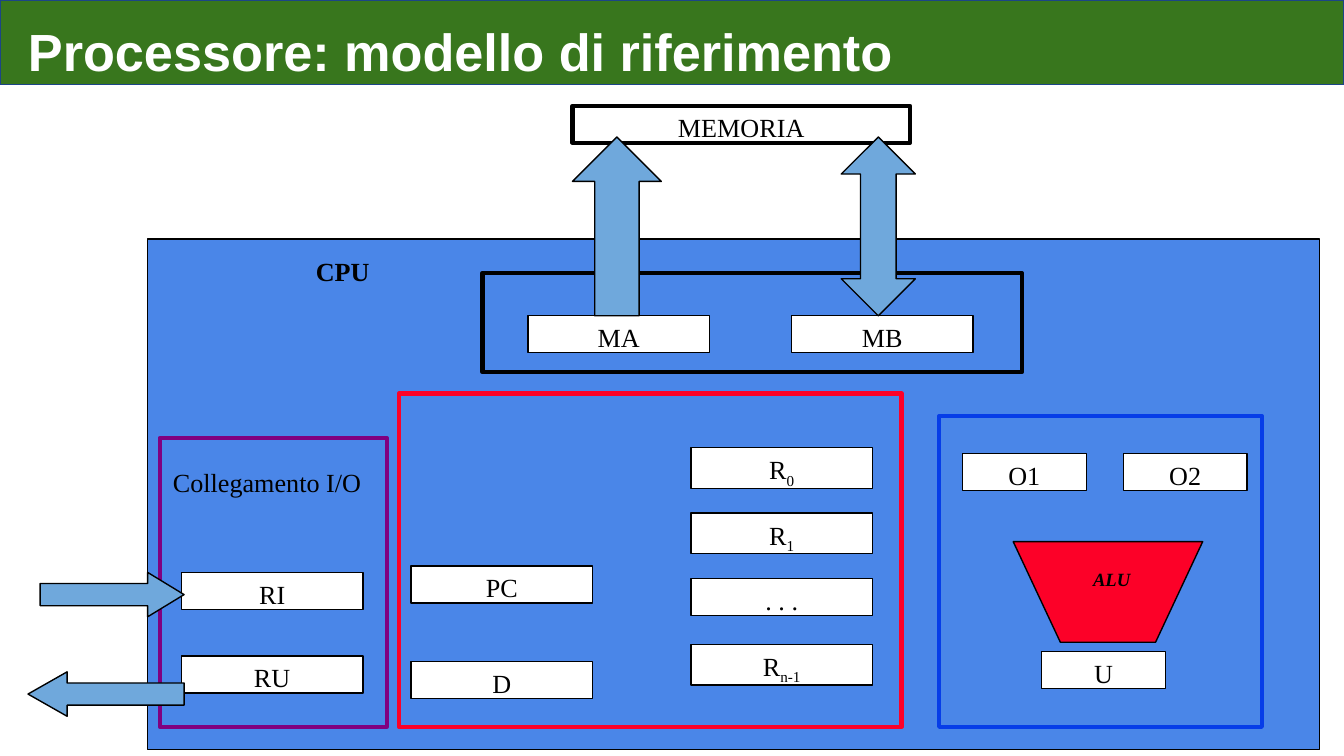
"""Build the slide on the reference model of a processor."""

from dataclasses import dataclass
from typing import Optional

from pptx import Presentation
from pptx.dml.color import RGBColor
from pptx.enum.shapes import MSO_SHAPE
from pptx.enum.text import MSO_ANCHOR, PP_ALIGN
from pptx.util import Cm, Pt

BLACK = RGBColor(0x00, 0x00, 0x00)
WHITE = RGBColor(0xFF, 0xFF, 0xFF)
CPU_BLUE = RGBColor(0x4A, 0x86, 0xE8)
ARROW_BLUE = RGBColor(0x6F, 0xA8, 0xDC)
FRAME_BLUE = RGBColor(0x06, 0x3D, 0xE8)
RED = RGBColor(0xFC, 0x01, 0x28)
PURPLE = RGBColor(0x80, 0x00, 0x80)
GREEN = RGBColor(0x38, 0x76, 0x1D)
NAVY = RGBColor(0x1C, 0x45, 0x87)

REGISTER_W, OPERAND_W, REGISTER_H = 3.43, 2.34, 0.7
GENERAL_TOP, GENERAL_PITCH = 8.46, 1.24
THIN, THICK = 0.75, 2.25


@dataclass
class Box:
    left: float
    top: float
    width: float
    height: float = REGISTER_H
    text: str = ""
    sub: str = ""
    fill: Optional[RGBColor] = WHITE
    line: Optional[RGBColor] = BLACK
    weight: float = THIN
    size: int = 14
    bold: bool = False
    italic: bool = False
    align: PP_ALIGN = PP_ALIGN.CENTER


@dataclass
class Arrow:
    kind: MSO_SHAPE
    left: float
    top: float
    width: float
    height: float
    shaft: float
    head: float


CPU = Box(2.79, 4.52, 22.15, 9.65, fill=CPU_BLUE)

FRAMES = [
    Box(9.12, 5.16, 10.19, 1.88, fill=None, weight=THICK),
    Box(7.54, 7.44, 9.5, 6.3, fill=None, line=RED, weight=THICK),
    Box(17.75, 7.87, 6.1, 5.87, fill=None, line=FRAME_BLUE, weight=THICK),
    Box(3.02, 8.28, 4.29, 5.46, fill=None, line=PURPLE, weight=THICK),
]

REGISTERS = [
    Box(10.82, 2, 6.38, text="MEMORIA", fill=None, weight=THICK),
    Box(9.98, 5.97, REGISTER_W, text="MA"),
    Box(14.96, 5.97, REGISTER_W, text="MB"),
    Box(7.77, 10.7, REGISTER_W, text="PC"),
    Box(7.77, 12.5, REGISTER_W, text="D"),
    Box(3.43, 10.82, REGISTER_W, text="RI"),
    Box(3.43, 12.4, REGISTER_W, text="RU"),
    Box(18.19, 8.57, OPERAND_W, text="O1"),
    Box(21.23, 8.57, OPERAND_W, text="O2"),
    Box(19.69, 12.32, OPERAND_W, text="U"),
]

GENERAL_REGISTERS = [
    Box(13.06, GENERAL_TOP + i * GENERAL_PITCH, REGISTER_W, height, text, sub)
    for i, (text, sub, height) in enumerate(
        [("R", "0", 0.77), ("R", "1", 0.77), (". . .", "", REGISTER_H), ("R", "n-1", 0.77)]
    )
]

LABELS = [
    Box(20.07, 10.62, 1.88, 0.58, "ALU", fill=RED, line=None, size=10, bold=True, italic=True),
    Box(5.74, 4.72, 1.78, text="CPU", fill=None, line=None, bold=True, align=PP_ALIGN.LEFT),
    Box(3.02, 8.71, 4.06, 1.22, "Collegamento I/O", fill=None, line=None),
]

ALU_OUTLINE = [(19.15, 10.24), (22.73, 10.24), (21.84, 12.14), (20.04, 12.14)]

ARROWS = [
    Arrow(MSO_SHAPE.RIGHT_ARROW, 0.76, 10.82, 2.72, 0.84, 0.5, 0.82),
    Arrow(MSO_SHAPE.LEFT_ARROW, 0.53, 12.7, 2.95, 0.84, 0.5, 0.88),
    Arrow(MSO_SHAPE.UP_ARROW, 10.82, 2.59, 1.68, 3.38, 0.5, 0.5),
    Arrow(MSO_SHAPE.UP_DOWN_ARROW, 15.9, 2.59, 1.4, 3.38, 0.5, 0.48),
]


def style(sp, fill: Optional[RGBColor], line: Optional[RGBColor], weight: float = THIN) -> None:
    sp.shadow.inherit = False
    if fill is None:
        sp.fill.background()
    else:
        sp.fill.solid()
        sp.fill.fore_color.rgb = fill
    if line is None:
        sp.line.fill.background()
    else:
        sp.line.color.rgb = line
        sp.line.width = Pt(weight)


def add_box(s, box: Box):
    sp = s.shapes.add_shape(
        MSO_SHAPE.RECTANGLE, Cm(box.left), Cm(box.top), Cm(box.width), Cm(box.height)
    )
    style(sp, box.fill, box.line, box.weight)
    if box.text:
        tf = sp.text_frame
        tf.word_wrap = True
        tf.vertical_anchor = MSO_ANCHOR.TOP
        tf.margin_left = tf.margin_right = Cm(0.23)
        tf.margin_top = tf.margin_bottom = Cm(0.11)
        p = tf.paragraphs[0]
        p.alignment = box.align
        p.font.name = "Times New Roman"
        p.font.size = Pt(box.size)
        p.font.bold = box.bold
        p.font.italic = box.italic
        p.font.color.rgb = BLACK
        p.add_run().text = box.text
        if box.sub:
            r = p.add_run()
            r.text = box.sub
            r.font._element.set("baseline", "-25000")
    return sp


def add_alu(s) -> None:
    start, *rest = [(Cm(x), Cm(y)) for x, y in ALU_OUTLINE]
    builder = s.shapes.build_freeform(*start)
    builder.add_line_segments(rest, close=True)
    style(builder.convert_to_shape(), RED, BLACK)


def add_arrow(s, arrow: Arrow) -> None:
    sp = s.shapes.add_shape(
        arrow.kind, Cm(arrow.left), Cm(arrow.top), Cm(arrow.width), Cm(arrow.height)
    )
    sp.adjustments[0] = arrow.shaft
    sp.adjustments[1] = arrow.head
    style(sp, ARROW_BLUE, BLACK)


def add_title(s, text: str) -> None:
    sp = add_box(s, Box(0, 0, 25.4, 1.6, text, fill=GREEN, line=NAVY, size=28, bold=True,
                        align=PP_ALIGN.LEFT))
    tf = sp.text_frame
    tf.margin_left, tf.margin_top = Cm(0.53), Cm(0.36)
    p = tf.paragraphs[0]
    p.font.name = "Arial"
    p.font.color.rgb = WHITE


def main() -> None:
    prs = Presentation()
    prs.slide_width, prs.slide_height = Cm(25.4), Cm(14.29)
    s = prs.slides.add_slide(prs.slide_layouts[6])
    add_box(s, CPU)
    add_alu(s)
    for box in FRAMES + REGISTERS + GENERAL_REGISTERS + LABELS:
        add_box(s, box)
    for arrow in ARROWS:
        add_arrow(s, arrow)
    add_title(s, "Processore: modello di riferimento")
    prs.save("out.pptx")


if __name__ == "__main__":
    main()
